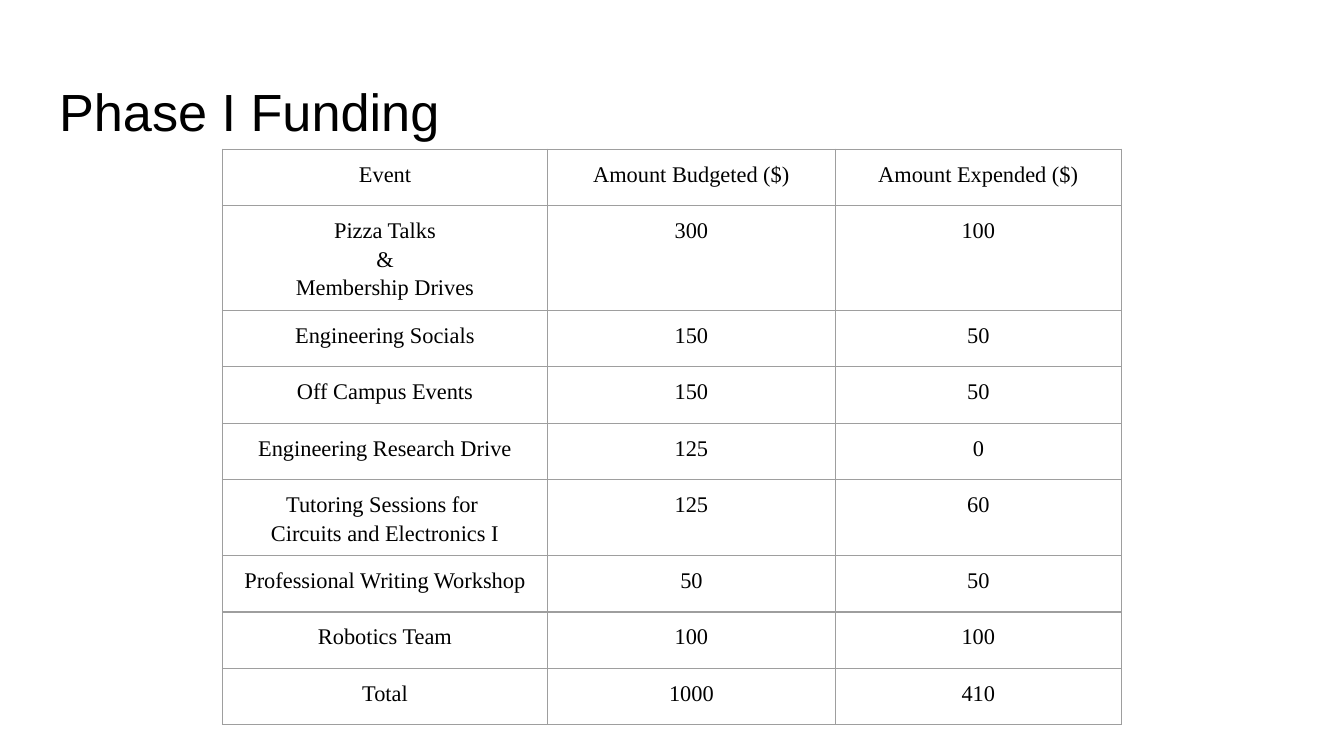
from typing import NamedTuple

from lxml.etree import SubElement
from pptx import Presentation
from pptx.dml.color import RGBColor
from pptx.enum.text import MSO_ANCHOR as Anchor, PP_ALIGN as Align
from pptx.oxml.ns import qn
from pptx.util import Emu, Inches, Pt

SLIDE_WIDTH = Inches(10)
SLIDE_HEIGHT = Emu(SLIDE_WIDTH * 9 // 16)
INK, PAPER, RULE = "000000", "FFFFFF", "9E9E9E"
COLUMN_WIDTHS = (2.42, 2.14, 2.13)
LINE_ROW_HEIGHT, TALL_ROW_HEIGHT = 0.42, 0.78


class BudgetRow(NamedTuple):
    event: str
    budgeted: str
    expended: str
    height: float = LINE_ROW_HEIGHT


ROWS = (
    BudgetRow("Event", "Amount Budgeted ($)", "Amount Expended ($)"),
    BudgetRow("Pizza Talks\n&\nMembership Drives", "300", "100", TALL_ROW_HEIGHT),
    BudgetRow("Engineering Socials", "150", "50"),
    BudgetRow("Off Campus Events", "150", "50"),
    BudgetRow("Engineering Research Drive", "125", "0"),
    BudgetRow("Tutoring Sessions for \nCircuits and Electronics I", "125", "60"),
    BudgetRow("Professional Writing Workshop", "50", "50"),
    BudgetRow("Robotics Team", "100", "100"),
    BudgetRow("Total", "1000", "410"),
)


def color(value: str) -> RGBColor:
    return RGBColor.from_string(value)


def write_text(frame, text: str, *, font: str, size: float, ink: str = INK,
               align=Align.LEFT, spacing: float = 1.0) -> None:
    """Fill a text frame, one paragraph for each line of the text."""
    frame.text = text
    for paragraph in frame.paragraphs:
        paragraph.alignment = align
        paragraph.line_spacing = spacing
        for run in paragraph.runs:
            run.font.name = font
            run.font.size = Pt(size)
            run.font.bold = False
            run.font.color.rgb = color(ink)


def set_borders(cell, line_color: str, width: float) -> None:
    properties = cell._tc.get_or_add_tcPr()
    for side in ("a:lnL", "a:lnR", "a:lnT", "a:lnB"):
        line = SubElement(properties, qn(side), w=str(Pt(width)))
        fill = SubElement(line, qn("a:solidFill"))
        SubElement(fill, qn("a:srgbClr"), val=line_color)


def draw_title(slide, text: str) -> None:
    title = slide.shapes.title
    title.left, title.top = Inches(0.34), Inches(0.49)
    title.width, title.height = Inches(9.32), Inches(0.63)
    frame = title.text_frame
    frame.margin_left = frame.margin_right = Inches(0.1)
    frame.margin_top = frame.margin_bottom = Inches(0.1)
    frame.vertical_anchor = Anchor.TOP
    write_text(frame, text, font="Arial", size=28)


def draw_cell(cell, text: str) -> None:
    cell.margin_left = cell.margin_right = Inches(0.07)
    cell.margin_top = cell.margin_bottom = Inches(0.07)
    cell.vertical_anchor = Anchor.TOP
    set_borders(cell, RULE, 0.75)
    cell.fill.background()
    write_text(cell.text_frame, text, font="Times New Roman", size=12,
               align=Align.CENTER, spacing=1.15)


def draw_table(slide, rows: tuple[BudgetRow, ...]) -> None:
    width = Inches(sum(COLUMN_WIDTHS))
    height = Inches(sum(row.height for row in rows))
    left = Emu((SLIDE_WIDTH - width) // 2)
    table = slide.shapes.add_table(len(rows), len(COLUMN_WIDTHS), left,
                                   Inches(1.11), width, height).table
    table.first_row = table.horz_banding = False
    for column, column_width in zip(table.columns, COLUMN_WIDTHS):
        column.width = Inches(column_width)
    for table_row, row in zip(table.rows, rows):
        table_row.height = Inches(row.height)
        for cell, text in zip(table_row.cells, (row.event, row.budgeted, row.expended)):
            draw_cell(cell, text)


def main() -> None:
    presentation = Presentation()
    presentation.slide_width, presentation.slide_height = SLIDE_WIDTH, SLIDE_HEIGHT
    # Title-only layout on a plain background
    slide = presentation.slides.add_slide(presentation.slide_layouts[5])
    slide.background.fill.solid()
    slide.background.fill.fore_color.rgb = color(PAPER)
    # Heading and budget table
    draw_title(slide, "Phase I Funding")
    draw_table(slide, ROWS)
    presentation.save("out.pptx")


if __name__ == "__main__":
    main()
